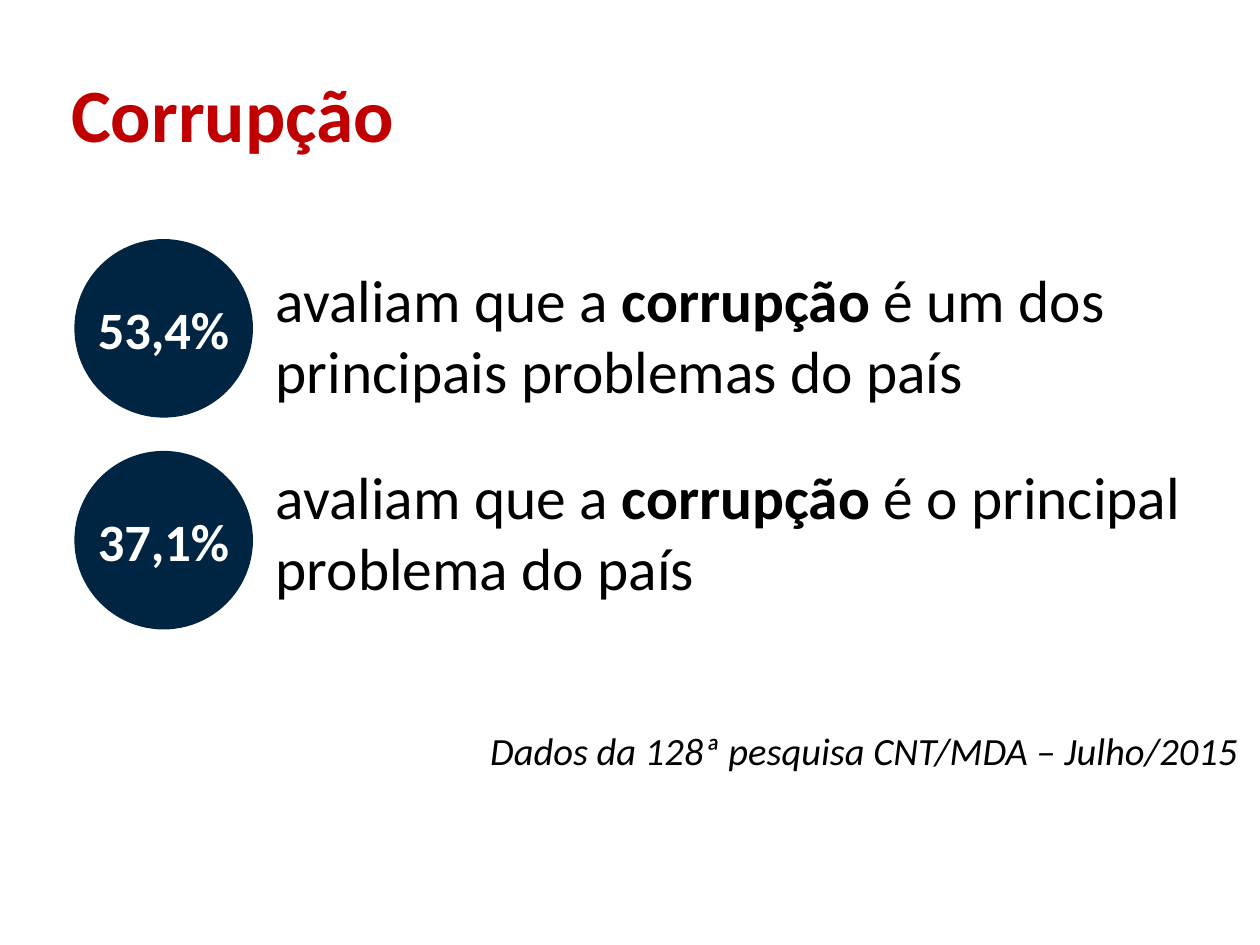
from pptx import Presentation
from pptx.dml.color import RGBColor
from pptx.enum.shapes import MSO_SHAPE
from pptx.enum.text import MSO_ANCHOR, PP_ALIGN
from pptx.util import Cm, Pt

OVAL = MSO_SHAPE.OVAL
TOP, MIDDLE = MSO_ANCHOR.TOP, MSO_ANCHOR.MIDDLE
LEFT, CENTER, RIGHT = PP_ALIGN.LEFT, PP_ALIGN.CENTER, PP_ALIGN.RIGHT

FONT = "Calibri"
RED, NAVY, BLACK, WHITE = "C00000", "002543", "000000", "FFFFFF"

TITLE = "Corrupção"
FINDINGS = [
    ("53,4%", ("avaliam que a ", "corrupção", " é um dos principais problemas do país")),
    ("37,1%", ("avaliam que a ", "corrupção", " é o principal problema do país")),
]
SOURCE = "Dados da 128ª pesquisa CNT/MDA – Julho/2015"

CIRCLE_LEFT, CIRCLE_TOP, CIRCLE_SIZE, CIRCLE_STEP = 1.5, 4.82, 3.6, 4.27
LABEL_WIDTH, LABEL_HEIGHT = 3.23, 2.18


def color(hex_code):
    return RGBColor.from_string(hex_code)


def style(run, size, hex_code, bold=False, italic=False):
    run.font.name = FONT
    run.font.size = Pt(size)
    run.font.color.rgb = color(hex_code)
    run.font.bold = bold
    run.font.italic = italic


def add_frame(slide, left, top, width, height, anchor=TOP):
    box = slide.shapes.add_textbox(Cm(left), Cm(top), Cm(width), Cm(height))
    frame = box.text_frame
    frame.word_wrap = True
    frame.vertical_anchor = anchor
    return frame


def add_line(frame, text, align, size, hex_code, **emphasis):
    frame.text = text
    line = frame.paragraphs[0]
    line.alignment = align
    style(line.runs[0], size, hex_code, **emphasis)


def add_circle(slide, top, percentage):
    circle = slide.shapes.add_shape(
        OVAL, Cm(CIRCLE_LEFT), Cm(top), Cm(CIRCLE_SIZE), Cm(CIRCLE_SIZE))
    circle.shadow.inherit = False
    circle.fill.solid()
    circle.fill.fore_color.rgb = color(NAVY)
    circle.line.fill.background()
    label = add_frame(
        slide,
        CIRCLE_LEFT + (CIRCLE_SIZE - LABEL_WIDTH) / 2,
        top + (CIRCLE_SIZE - LABEL_HEIGHT) / 2,
        LABEL_WIDTH, LABEL_HEIGHT, MIDDLE)
    label.word_wrap = False
    add_line(label, percentage, CENTER, 30, WHITE, bold=True)


def add_statements(slide):
    frame = add_frame(slide, 5.31, 5.17, 19.4, 7.8)
    for index, (_, parts) in enumerate(FINDINGS):
        statement = frame.add_paragraph() if index else frame.paragraphs[0]
        statement.alignment = LEFT
        if index:
            statement.space_before = Pt(31)
        for part in parts:
            run = statement.add_run()
            run.text = part
            style(run, 34, BLACK, bold=part == "corrupção")


def main():
    deck = Presentation()
    deck.slide_width, deck.slide_height = Cm(25.4), Cm(19.05)
    slide = deck.slides.add_slide(deck.slide_layouts[6])

    title = add_frame(slide, 0.89, 1.12, 7.6, 2.31, MIDDLE)
    add_line(title, TITLE, CENTER, 43, RED, bold=True)
    add_statements(slide)
    source = add_frame(slide, 8.89, 14.53, 16.31, 1.19)
    add_line(source, SOURCE, RIGHT, 22, BLACK, italic=True)
    for index, (percentage, _) in enumerate(FINDINGS):
        add_circle(slide, CIRCLE_TOP + index * CIRCLE_STEP, percentage)

    deck.save("out.pptx")


if __name__ == "__main__":
    main()
